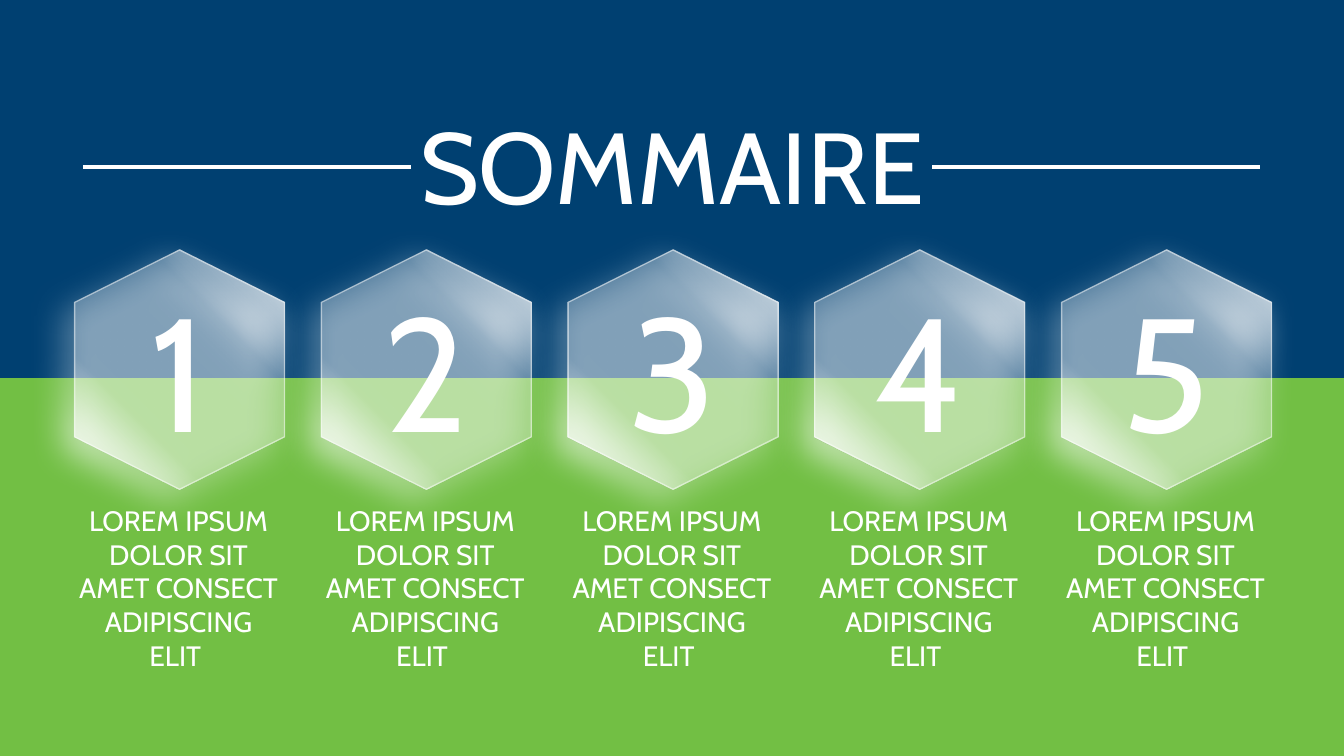
from dataclasses import dataclass

from lxml import etree
from pptx import Presentation
from pptx.dml.color import RGBColor
from pptx.enum.shapes import MSO_CONNECTOR, MSO_SHAPE
from pptx.enum.text import MSO_ANCHOR, MSO_AUTO_SIZE, PP_ALIGN
from pptx.oxml import parse_xml
from pptx.oxml.ns import nsdecls, qn
from pptx.util import Emu, Pt

RECT, HEXAGON = MSO_SHAPE.RECTANGLE, MSO_SHAPE.HEXAGON
STRAIGHT = MSO_CONNECTOR.STRAIGHT
CENTER, TOP = PP_ALIGN.CENTER, MSO_ANCHOR.TOP
GROW = MSO_AUTO_SIZE.SHAPE_TO_FIT_TEXT

FONT = "Cabin"
WHITE, BLUE, GREEN = "FFFFFF", "004071", "72BF44"
CAPTION = "LOREM IPSUM\vDOLOR SIT AMET CONSECT ADIPISCING ELIT "
STEP_PITCH = 235

# Gradient stops: position and opacity, both in percent
GLASS_STOPS = [(0, 100), (30, 30), (70, 30), (100, 100)]


@dataclass
class Box:
    left: int
    top: int
    width: int
    height: int

    def emu(self) -> list[Emu]:
        return [px(n) for n in (self.left, self.top, self.width, self.height)]

    def shifted(self, dx: int) -> "Box":
        return Box(self.left + dx, self.top, self.width, self.height)


@dataclass
class Step:
    number: str
    caption: str


BANDS = [(Box(0, 0, 1280, 440), BLUE), (Box(0, 360, 1280, 360), GREEN)]
RULES = [(888, 1200), (79, 391)]
RULE_Y = 159
TITLE = Box(0, 94, 1280, 126)
CAPTION_BOX = Box(65, 475, 210, 139)
HEXAGON_BOX = Box(57, 252, 228, 200)
NUMBER_BOX = Box(57, 254, 227, 196)
STEPS = [Step(str(n), CAPTION) for n in range(1, 6)]


def px(n: int) -> Emu:
    return Emu(n * 9525)


def color(value: str) -> RGBColor:
    return RGBColor.from_string(value)


def write(sp, text: str, size: int) -> None:
    """Fill a text shape with one centred white paragraph."""
    tf = sp.text_frame
    tf.word_wrap = True
    tf.auto_size = GROW
    tf.vertical_anchor = TOP
    p = tf.paragraphs[0]
    p.alignment = CENTER
    p.line_spacing = 1.0
    for i, part in enumerate(text.split("\v")):
        if i:
            p.add_line_break()
        r = p.add_run()
        r.text = part
        r.font.name = FONT
        r.font.size = Pt(size)
        r.font.color.rgb = color(WHITE)


def add_text(shapes, box: Box, text: str, size: int) -> None:
    write(shapes.add_textbox(*box.emu()), text, size)


def add_band(shapes, box: Box, fill: str) -> None:
    sp = shapes.add_shape(RECT, *box.emu())
    sp.shadow.inherit = False
    sp.fill.solid()
    sp.fill.fore_color.rgb = color(fill)
    sp.line.fill.background()


def add_rule(shapes, x1: int, x2: int, y: int) -> None:
    line = shapes.add_connector(STRAIGHT, px(x1), px(y), px(x2), px(y))
    line.line.color.rgb = color(WHITE)
    line.line.width = Pt(3)
    etree.SubElement(line.element.spPr, qn("a:effectLst"))


def add_glass_hexagon(shapes, box: Box) -> None:
    sp = shapes.add_shape(HEXAGON, *box.emu())
    sp.rotation = 90
    sp.shadow.inherit = False
    sp.line.color.rgb = color(WHITE)
    sp.line.width = Pt(1)
    spPr = sp.element.spPr

    # Half-transparent outline
    outline = spPr.find(".//" + qn("a:ln")).find(".//" + qn("a:srgbClr"))
    etree.SubElement(outline, qn("a:alpha"), val="50000")

    # Diagonal sheen
    stops = "".join(
        f'<a:gs pos="{pos * 1000}"><a:srgbClr val="{WHITE}">'
        f'<a:alpha val="{opacity * 1000}"/></a:srgbClr></a:gs>'
        for pos, opacity in GLASS_STOPS)
    spPr.find(qn("a:prstGeom")).addnext(parse_xml(
        f'<a:gradFill {nsdecls("a")} rotWithShape="1"><a:gsLst>{stops}</a:gsLst>'
        '<a:lin ang="2700000" scaled="0"/></a:gradFill>'))

    # White glow towards the lower left
    spPr.find(qn("a:effectLst")).append(parse_xml(
        f'<a:outerShdw {nsdecls("a")} blurRad="{Pt(24)}" dist="{Pt(11)}" '
        'dir="8100000" algn="ctr" rotWithShape="0">'
        f'<a:srgbClr val="{WHITE}"/></a:outerShdw>'))


def add_step(shapes, step: Step, dx: int) -> None:
    group = shapes.add_group_shape()
    group.name = f"Step {step.number}"
    add_text(group.shapes, CAPTION_BOX.shifted(dx), step.caption, 20)
    add_glass_hexagon(group.shapes, HEXAGON_BOX.shifted(dx))
    add_text(group.shapes, NUMBER_BOX.shifted(dx), step.number, 115)


def main() -> None:
    prs = Presentation()
    prs.slide_width, prs.slide_height = px(1280), px(720)
    s = prs.slides.add_slide(prs.slide_layouts[5])

    # Background
    for box, fill in BANDS:
        add_band(s.shapes, box, fill)

    # Numbered steps, the first one in front
    for i, step in reversed(list(enumerate(STEPS))):
        add_step(s.shapes, step, i * STEP_PITCH)

    # Title between two rules, in front of the bands
    for x1, x2 in RULES:
        add_rule(s.shapes, x1, x2, RULE_Y)
    title = s.shapes.title
    title.left, title.top, title.width, title.height = TITLE.emu()
    write(title, "SOMMAIRE", 72)
    title.element.getparent().append(title.element)

    prs.save("out.pptx")


if __name__ == "__main__":
    main()
